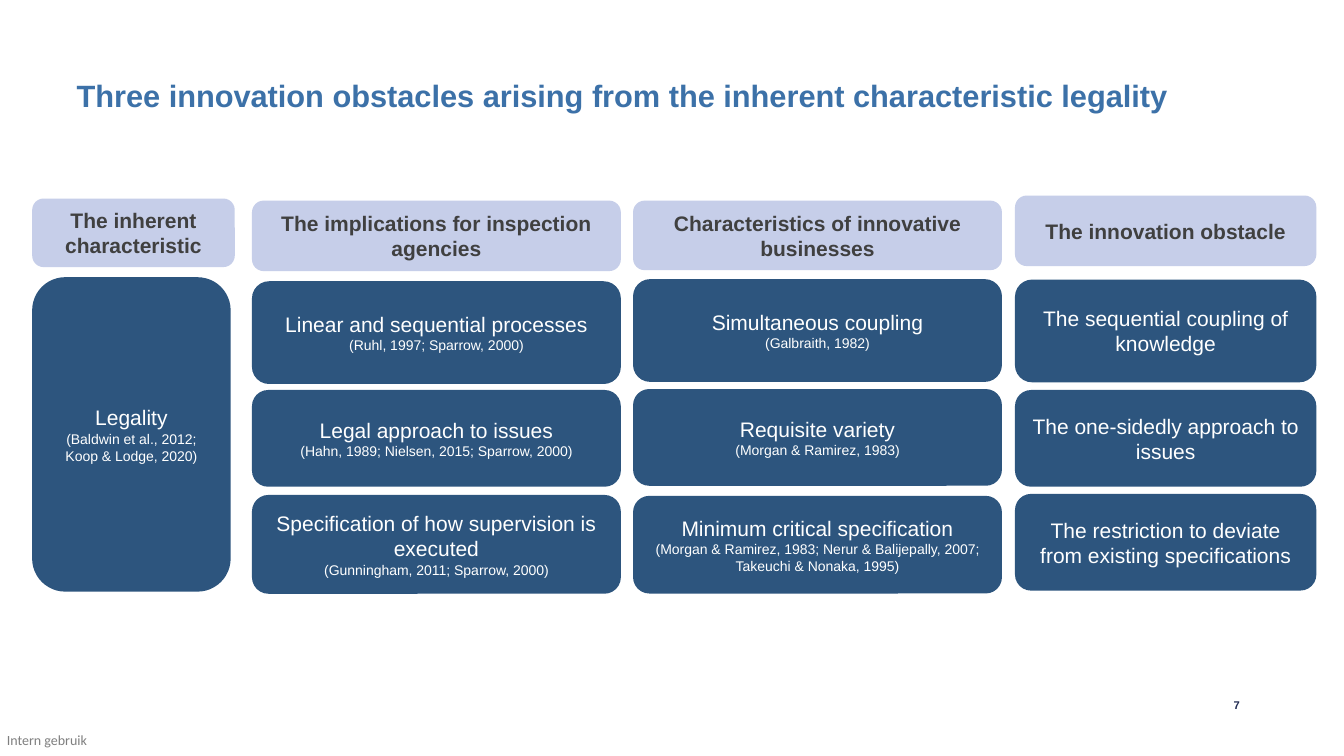
"""Build the slide on innovation obstacles arising from legality."""
from pptx import Presentation
from pptx.dml.color import RGBColor
from pptx.enum.shapes import MSO_SHAPE as Shape
from pptx.enum.text import MSO_ANCHOR as Anchor, PP_ALIGN as Align
from pptx.util import Pt

COLORS = {
    "title": "3C71A8",
    "number": "202B52",
    "label": "7F7F7F",
    "card": "2D557E",
    "card_text": "FFFFFF",
    "header": "C6CEE9",
    "header_text": "404040",
}

HEADERS = [
    (23, 141.8, 144.7, 49, "The inherent characteristic"),
    (180, 143.3, 263.5, 50.4, "The implications for inspection agencies"),
    (452.2, 143.3, 263.5, 49.7, "Characteristics of innovative businesses"),
    (725, 139.7, 215.3, 50.4, "The innovation obstacle"),
]

COLUMNS = [
    (23, 141.8, [
        (198, 224.6, "Legality", "(Baldwin et al., 2012; Koop & Lodge, 2020)"),
    ]),
    (180, 263.5, [
        (200.9, 73.4, "Linear and sequential processes", "(Ruhl, 1997; Sparrow, 2000)"),
        (278.6, 69.1, "Legal approach to issues", "(Hahn, 1989; Nielsen, 2015; Sparrow, 2000)"),
        (353.5, 70.6, "Specification of how supervision is executed", "(Gunningham, 2011; Sparrow, 2000)"),
    ]),
    (452.2, 263.5, [
        (199.4, 73.4, "Simultaneous coupling", "(Galbraith, 1982)"),
        (277.9, 69.1, "Requisite variety", "(Morgan & Ramirez, 1983)"),
        (354.2, 69.8, "Minimum critical specification",
         "(Morgan & Ramirez, 1983; Nerur & Balijepally, 2007; Takeuchi & Nonaka, 1995)"),
    ]),
    (725, 215.3, [
        (199.7, 73.4, "The sequential coupling of knowledge", ""),
        (278.6, 69.1, "The one-sidedly approach to issues", ""),
        (352.8, 69.1, "The restriction to deviate from existing specifications", ""),
    ]),
]


def color(name):
    return RGBColor.from_string(COLORS[name])


def style_paragraph(paragraph, text, size, color_name, bold=False, font="Arial"):
    paragraph.text = text
    paragraph.font.name = font
    paragraph.font.size = Pt(size)
    paragraph.font.bold = bold
    paragraph.font.color.rgb = color(color_name)


def add_box(slide, left, top, width, height, fill, lines, bold=False):
    box = slide.shapes.add_shape(
        Shape.ROUNDED_RECTANGLE, Pt(left), Pt(top), Pt(width), Pt(height))
    box.shadow.inherit = False
    box.fill.solid()
    box.fill.fore_color.rgb = color(fill)
    box.line.fill.background()
    frame = box.text_frame
    frame.word_wrap = True
    frame.vertical_anchor = Anchor.MIDDLE
    for index, (text, size) in enumerate(lines):
        paragraph = frame.add_paragraph() if index else frame.paragraphs[0]
        style_paragraph(paragraph, text, size, f"{fill}_text", bold)
        paragraph.alignment = Align.CENTER


def add_label(slide, left, top, width, height, text, size, color_name,
              bold=False, font="Arial", wrap=True):
    label = slide.shapes.add_textbox(Pt(left), Pt(top), Pt(width), Pt(height))
    frame = label.text_frame
    frame.word_wrap = wrap
    frame.margin_left = frame.margin_top = frame.margin_right = frame.margin_bottom = 0
    paragraph = frame.paragraphs[0]
    style_paragraph(paragraph, text, size, color_name, bold, font)
    return frame


def add_heading(slide, *arguments):
    frame = add_label(slide, *arguments, bold=True)
    paragraph = frame.paragraphs[0]
    paragraph.line_spacing = 0.9
    paragraph.space_before = paragraph.space_after = Pt(6)
    return frame


def main():
    presentation = Presentation()
    presentation.slide_width, presentation.slide_height = Pt(960), Pt(540)
    slide = presentation.slides.add_slide(presentation.slide_layouts[6])

    add_heading(slide, 54.7, 57.6, 850.3, 28.1,
                "Three innovation obstacles arising from the inherent characteristic legality",
                22, "title")
    for left, top, width, height, text in HEADERS:
        add_box(slide, left, top, width, height, "header", [(text, 15)], bold=True)
    for left, width, cards in COLUMNS:
        for top, height, text, citation in cards:
            lines = [(text, 15)] + ([(citation, 10)] if citation else [])
            add_box(slide, left, top, width, height, "card", lines)

    add_label(slide, 5, 522.7, 59.8, 12.2, "Intern gebruik", 10, "label",
              font="Calibri", wrap=False)
    number = add_heading(slide, 864.7, 496.8, 20.9, 14.4, "7", 8, "number")
    number.vertical_anchor = Anchor.MIDDLE
    number.paragraphs[0].alignment = Align.RIGHT

    presentation.save("out.pptx")


if __name__ == "__main__":
    main()
